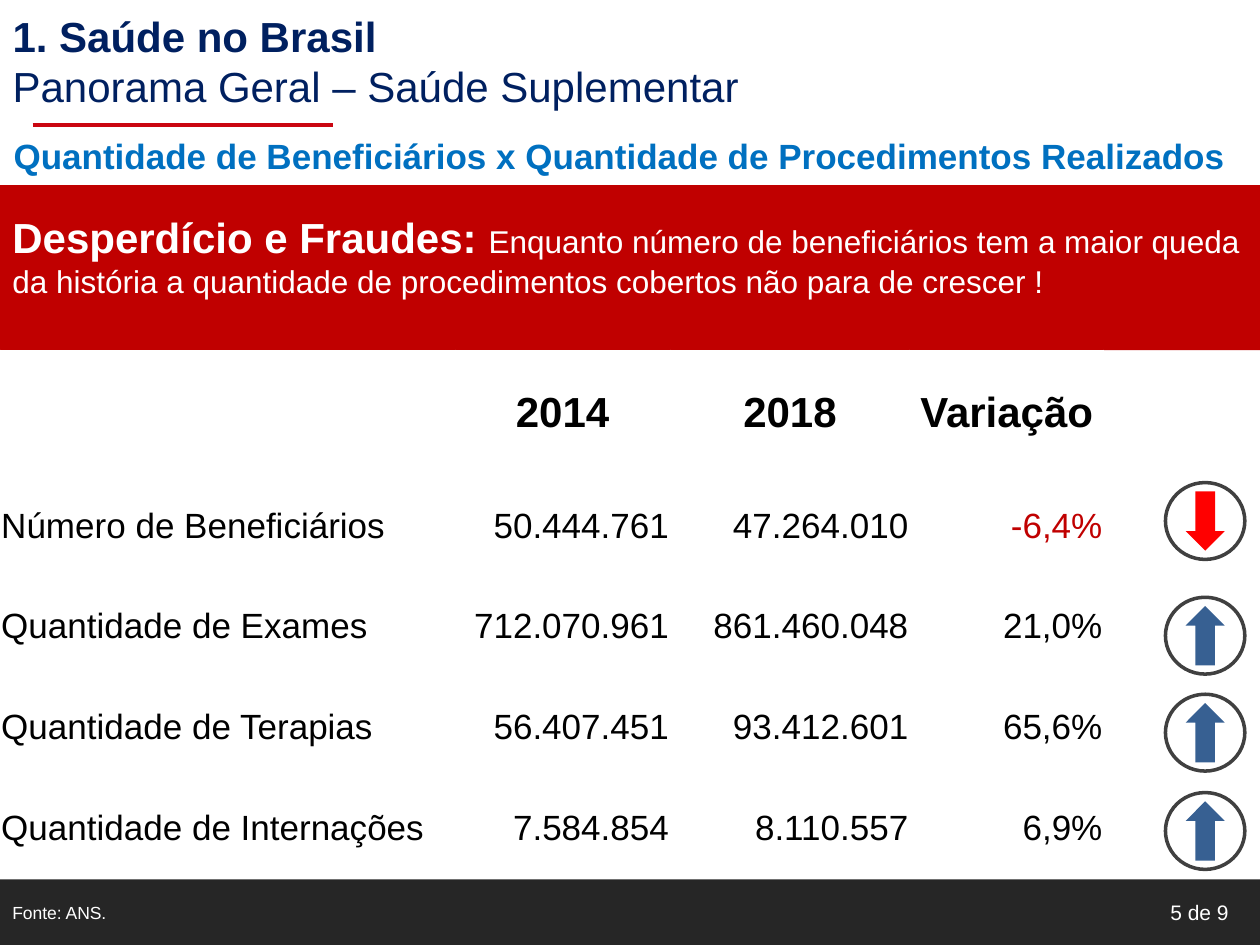
from typing import NamedTuple

from pptx import Presentation
from pptx.dml.color import RGBColor
from pptx.enum.shapes import MSO_CONNECTOR, MSO_SHAPE
from pptx.enum.text import MSO_ANCHOR, PP_ALIGN
from pptx.oxml import parse_xml
from pptx.oxml.ns import nsdecls
from pptx.util import Inches, Pt

RECT, OVAL, ARROW = MSO_SHAPE.RECTANGLE, MSO_SHAPE.OVAL, MSO_SHAPE.RIGHT_ARROW
LEFT, MID, RIGHT = PP_ALIGN.LEFT, PP_ALIGN.CENTER, PP_ALIGN.RIGHT
TOP, CENTER = MSO_ANCHOR.TOP, MSO_ANCHOR.MIDDLE
FONT = "Arial"
WHITE, BLACK, RED, NAVY = "FFFFFF", "000000", "C00000", "002060"


class Row(NamedTuple):
    label: str
    old: str
    new: str
    change: str
    top: float  # top of the trend circle
    up: bool = True


ROWS = [
    Row("Número de Beneficiários", "50.444.761", "47.264.010", "-6,4%", 3.83, False),
    Row("Quantidade de Exames", "712.070.961", "861.460.048", "21,0%", 4.74),
    Row("Quantidade de Terapias", "56.407.451", "93.412.601", "65,6%", 5.51),
    Row("Quantidade de Internações", "7.584.854", "8.110.557", "6,9%", 6.29),
]
HEADS = ["", "2014", "2018", "Variação"]
WIDTHS = [3.61, 1.71, 1.9, 1.54]
HEIGHTS = [0.99] + [0.8] * len(ROWS)


def rgb(code: str) -> RGBColor:
    return RGBColor.from_string(code)


def write(para, text: str, *, size: float, color: str = BLACK,
          bold: bool = False, align=LEFT) -> None:
    para.alignment = align
    run = para.add_run()
    run.text = text
    font = run.font
    font.name, font.size, font.bold = FONT, Pt(size), bold
    font.color.rgb = rgb(color)


def add_text(slide, box: tuple, text: str, **style) -> None:
    frame = slide.shapes.add_textbox(*map(Inches, box)).text_frame
    frame.word_wrap = True
    write(frame.paragraphs[0], text, **style)


def add_form(slide, kind, box: tuple, fill: str = "", line: str = ""):
    form = slide.shapes.add_shape(kind, *map(Inches, box))
    form.shadow.inherit = False
    if fill:
        form.fill.solid()
        form.fill.fore_color.rgb = rgb(fill)
    else:
        form.fill.background()
    if line:
        form.line.color.rgb = rgb(line)
        form.line.width = Pt(2)
    else:
        form.line.fill.background()
    return form


def add_trend(slide, row: Row) -> None:
    wide, high, long, thick = 0.63, 0.61, 0.47, 0.31
    left = 9.25
    add_form(slide, OVAL, (left, row.top, wide, high), line="404040")
    box = (left + (wide - long) / 2, row.top + (high - thick) / 2, long, thick)
    arrow = add_form(slide, ARROW, box, fill="376092" if row.up else "FF0000")
    arrow.rotation = 270 if row.up else 90


def fill_cell(cell, text: str, **style) -> None:
    cell.margin_left = cell.margin_right = cell.margin_top = Inches(0.01)
    cell.margin_bottom = 0
    cell.vertical_anchor = CENTER
    props = cell._tc.get_or_add_tcPr()
    for side in ("lnL", "lnR", "lnT", "lnB"):
        props.append(parse_xml(
            f'<a:{side} {nsdecls("a")} w="12700"><a:solidFill>'
            f'<a:srgbClr val="{WHITE}"/></a:solidFill></a:{side}>'))
    cell.fill.background()
    if text:
        write(cell.text_frame.paragraphs[0], text, **style)


def add_grid(slide) -> None:
    grid = slide.shapes.add_table(
        len(HEIGHTS), len(WIDTHS), Inches(0), Inches(2.78),
        Inches(sum(WIDTHS)), Inches(sum(HEIGHTS))).table
    grid.first_row = grid.horz_banding = False
    for col, width in zip(grid.columns, WIDTHS):
        col.width = Inches(width)
    for line, height in zip(grid.rows, HEIGHTS):
        line.height = Inches(height)
    for c, head in enumerate(HEADS):
        fill_cell(grid.cell(0, c), head, size=24, bold=True, align=MID)
    for r, row in enumerate(ROWS, 1):
        for c, text in enumerate(row[:4]):
            fill_cell(grid.cell(r, c), text, size=20,
                      color=RED if text.startswith("-") else BLACK,
                      align=RIGHT if c else LEFT)


def main() -> None:
    deck = Presentation()
    deck.slide_width, deck.slide_height = Inches(10), Inches(7.5)
    slide = deck.slides.add_slide(deck.slide_layouts[5])

    # Title with its red rule
    title = slide.shapes.title
    title.left, title.top, title.width, title.height = map(
        Inches, (0, 0.03, 10, 0.91))
    frame = title.text_frame
    frame.vertical_anchor = TOP
    write(frame.paragraphs[0], "1. Saúde no Brasil", size=24, color=NAVY, bold=True)
    write(frame.add_paragraph(), "Panorama Geral – Saúde Suplementar",
          size=24, color=NAVY)
    rule = slide.shapes.add_connector(
        MSO_CONNECTOR.STRAIGHT, *map(Inches, (0.26, 0.99, 2.64, 0.99)))
    rule.line.color.rgb = rgb("CA0611")
    rule.line.width = Pt(2.25)
    rule._element.spPr.append(parse_xml(f'<a:effectLst {nsdecls("a")}/>'))

    # Subtitle
    add_text(slide, (0.01, 1.02, 10, 0.44),
             "Quantidade de Beneficiários x Quantidade de Procedimentos Realizados",
             size=20, color="0070C0", bold=True)

    # Footer
    add_form(slide, RECT, (0, 6.98, 10, 0.52), fill="262626")
    add_text(slide, (6.42, 7.09, 3.43, 0.3), "5 de 9",
             size=12, color=WHITE, align=RIGHT)
    add_text(slide, (0, 7.11, 9.7, 0.27), "Fonte: ANS.", size=10, color=WHITE)

    # Trend marks
    for row in ROWS:
        add_trend(slide, row)

    # Red banner
    frame = add_form(slide, RECT, (0, 1.47, 10.03, 1.31), fill=RED).text_frame
    frame.word_wrap = True
    frame.vertical_anchor = TOP
    frame.margin_top = Inches(0.21)
    para = frame.paragraphs[0]
    write(para, "Desperdício e Fraudes: ", size=24, color=WHITE, bold=True)
    write(para, "Enquanto número de beneficiários tem a maior queda da história "
          "a quantidade de procedimentos cobertos não para de crescer !",
          size=18, color=WHITE)

    # Figures
    add_grid(slide)
    deck.save("out.pptx")


if __name__ == "__main__":
    main()
